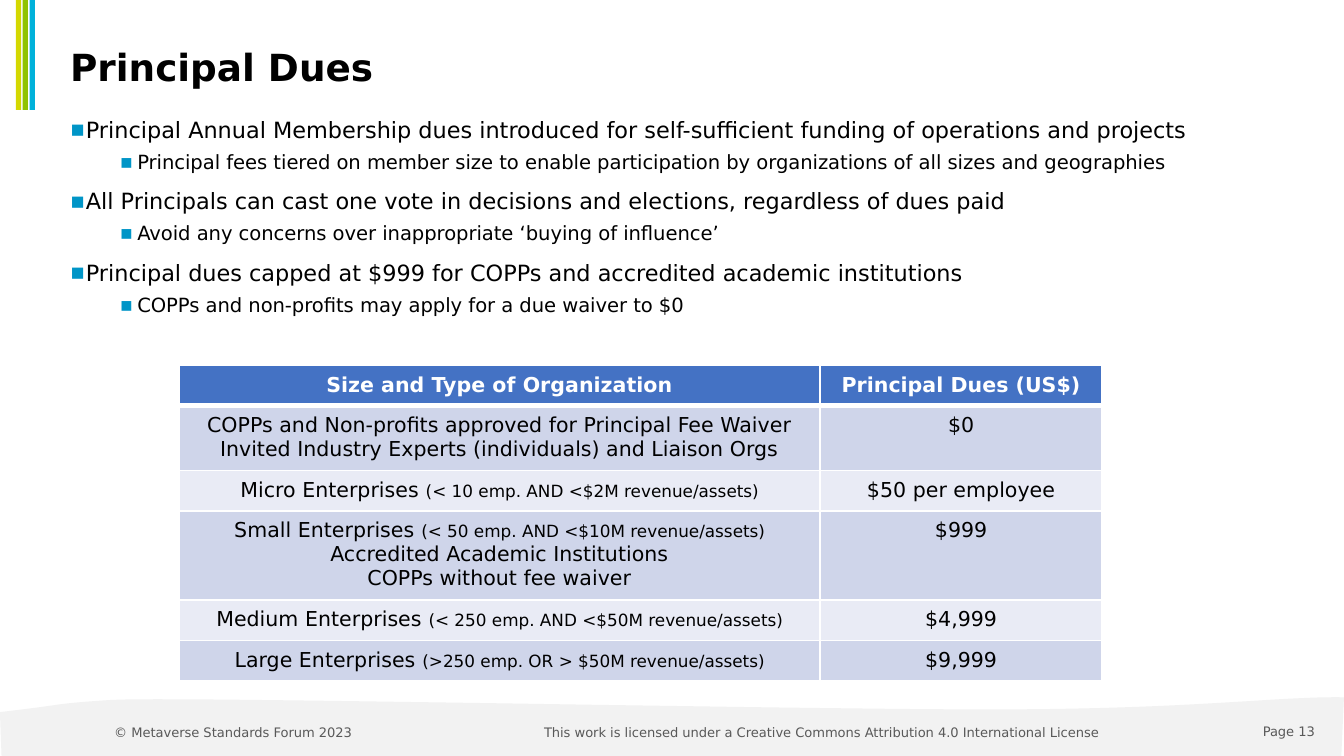
from lxml import etree
from pptx import Presentation
from pptx.dml.color import RGBColor
from pptx.enum.shapes import MSO_SHAPE as Shape
from pptx.enum.text import MSO_ANCHOR as Anchor, MSO_AUTO_SIZE as AutoSize, PP_ALIGN as Align
from pptx.oxml.ns import qn
from pptx.util import Cm, Pt

FONT = "DejaVu Sans"
BLACK = RGBColor(0x00, 0x00, 0x00)
WHITE = RGBColor(0xFF, 0xFF, 0xFF)
FOOTER_GRAY = RGBColor(0x59, 0x59, 0x59)
WAVE_GRAY = RGBColor(0xF2, 0xF2, 0xF2)
BULLET_BLUE = RGBColor(0x00, 0x95, 0xC7)
HEADER_BLUE = RGBColor(0x44, 0x72, 0xC4)
BANDS = [RGBColor(0xE9, 0xEB, 0xF5), RGBColor(0xCF, 0xD5, 0xEA)]
STRIPES = [RGBColor(0xD4, 0xD8, 0x00), RGBColor(0x91, 0xC3, 0x01), RGBColor(0x00, 0xB1, 0xDA)]

# Top edge of the footer wave: start point, then Bezier control triples (cm)
WAVE_START = (0, 13.46)
WAVE_CURVES = [
    [(1.32, 13.31), (0.91, 13.31), (2.11, 13.23)],
    [(3.3, 13.16), (14.81, 13.41), (18.69, 13.41)],
    [(22.56, 13.41), (24.13, 13.16), (25.4, 13.18)],
]

# Level and text of each bullet
POINTS = [
    (0, "Principal Annual Membership dues introduced for self-sufficient funding of operations and projects"),
    (1, "Principal fees tiered on member size to enable participation by organizations of all sizes and geographies"),
    (0, "All Principals can cast one vote in decisions and elections, regardless of dues paid"),
    (1, "Avoid any concerns over inappropriate ‘buying of influence’"),
    (0, "Principal dues capped at $999 for COPPs and accredited academic institutions"),
    (1, "COPPs and non-profits may apply for a due waiver to $0"),
]
# Per level: left margin, hanging indent, space before, size
LEVELS = [(Cm(0.3), Cm(-0.3), Pt(7.5), Pt(12)), (Cm(1.27), Cm(-0.33), Pt(3.8), Pt(10.5))]

# Row height (cm), lines of the organization cell as (name, small note), dues
DUES = [
    (0.76, [("Size and Type of Organization", "")], "Principal Dues (US$)"),
    (1.22, [("COPPs and Non-profits approved for Principal Fee Waiver", ""),
            ("Invited Industry Experts (individuals) and Liaison Orgs", "")], "$0"),
    (0.76, [("Micro Enterprises ", "(< 10 emp. AND <$2M revenue/assets)")], "$50 per employee"),
    (1.68, [("Small Enterprises ", "(< 50 emp. AND <$10M revenue/assets)"),
            ("Accredited Academic Institutions", ""),
            ("COPPs without fee waiver", "")], "$999"),
    (0.76, [("Medium Enterprises ", "(< 250 emp. AND <$50M revenue/assets)")], "$4,999"),
    (0.76, [("Large Enterprises ", "(>250 emp. OR > $50M revenue/assets)")], "$9,999"),
]


def format_run(run, size, color, bold=False):
    run.font.name = FONT
    run.font.size = size
    run.font.bold = bold
    run.font.color.rgb = color


def place(shape, left, top, width, height):
    shape.left, shape.top, shape.width, shape.height = Cm(left), Cm(top), Cm(width), Cm(height)


def paint(shape, color):
    shape.shadow.inherit = False
    shape.fill.solid()
    shape.fill.fore_color.rgb = color
    shape.line.fill.background()


def curve_points(start, controls, steps=24):
    corners = [start, *controls]
    for step in range(1, steps + 1):
        t = step / steps
        weights = [(1 - t) ** 3, 3 * t * (1 - t) ** 2, 3 * t ** 2 * (1 - t), t ** 3]
        yield tuple(sum(w * c[axis] for w, c in zip(weights, corners)) for axis in (0, 1))


def add_wave(slide):
    edge = [WAVE_START]
    for controls in WAVE_CURVES:
        edge.extend(curve_points(edge[-1], controls))
    outline = [(Cm(x), Cm(y)) for x, y in edge + [(25.35, 14.29), (0.03, 14.29)]]
    builder = slide.shapes.build_freeform(*outline[0])
    builder.add_line_segments(outline[1:], close=True)
    paint(builder.convert_to_shape(), WAVE_GRAY)


def add_stripes(slide):
    for i, color in enumerate(STRIPES):
        stripe = slide.shapes.add_shape(Shape.RECTANGLE, Cm(0.3 + 0.13 * i), 0, Cm(0.1), Cm(2.08))
        paint(stripe, color)


def add_footer(slide, text, left, top, width, height, align):
    box = slide.shapes.add_textbox(Cm(left), Cm(top), Cm(width), Cm(height))
    frame = box.text_frame
    frame.word_wrap = True
    frame.vertical_anchor = Anchor.MIDDLE
    frame.margin_top = frame.margin_bottom = Cm(0.1)
    frame.margin_left = frame.margin_right = Cm(0.2)
    frame.text = text
    line = frame.paragraphs[0]
    line.alignment = align
    line.line_spacing = 0.99
    format_run(line.runs[0], Pt(7), FOOTER_GRAY)


def fill_title(title):
    place(title, 1.07, 0.81, 23.24, 1.02)
    frame = title.text_frame
    frame.auto_size = AutoSize.NONE
    frame.vertical_anchor = Anchor.MIDDLE
    frame.text = "Principal Dues"
    heading = frame.paragraphs[0]
    heading.alignment = Align.LEFT
    heading.line_spacing = 0.9
    format_run(heading.runs[0], Pt(20), BLACK, bold=True)


def set_bullet(paragraph, margin, indent):
    props = paragraph._p.get_or_add_pPr()
    props.set("marL", str(margin))
    props.set("indent", str(indent))
    color = etree.SubElement(props, qn("a:buClr"))
    etree.SubElement(color, qn("a:srgbClr"), val=str(BULLET_BLUE))
    etree.SubElement(props, qn("a:buFont"), typeface=FONT)
    etree.SubElement(props, qn("a:buChar"), char="▪")


def fill_body(body):
    place(body, 1.07, 2.06, 23.24, 10.82)
    frame = body.text_frame
    frame.auto_size = AutoSize.NONE
    for i, (level, text) in enumerate(POINTS):
        point = frame.add_paragraph() if i else frame.paragraphs[0]
        margin, indent, before, size = LEVELS[level]
        point.text = text
        point.level = level
        set_bullet(point, margin, indent)
        point.space_before = before if i else Pt(0)
        format_run(point.runs[0], size, BLACK)


def set_borders(cell, top, bottom):
    props = cell._tc.get_or_add_tcPr()
    for side, width in (("L", 1), ("R", 1), ("T", top), ("B", bottom)):
        border = etree.SubElement(props, qn("a:ln" + side), w=str(Pt(width)))
        fill = etree.SubElement(border, qn("a:solidFill"))
        etree.SubElement(fill, qn("a:srgbClr"), val=str(WHITE))


def fill_cell(cell, lines, row):
    is_header = row == 0
    set_borders(cell, top=3 if row == 1 else 1, bottom=3 if is_header else 1)
    cell.fill.solid()
    cell.fill.fore_color.rgb = HEADER_BLUE if is_header else BANDS[row % 2]
    cell.margin_left = cell.margin_right = Cm(0.28)
    cell.margin_top = cell.margin_bottom = Cm(0.15)
    color = WHITE if is_header else BLACK
    frame = cell.text_frame
    for i, (name, note) in enumerate(lines):
        line = frame.add_paragraph() if i else frame.paragraphs[0]
        line.text = name
        line.alignment = Align.CENTER
        line.line_spacing = 0.99
        format_run(line.runs[0], Pt(11), color, is_header)
        if note:
            note_run = line.add_run()
            note_run.text = note
            format_run(note_run, Pt(9), color)


def add_dues_table(slide):
    frame = slide.shapes.add_table(len(DUES), 2, Cm(3.38), Cm(6.91), Cm(17.45), Cm(5.94))
    table = frame.table
    table.columns[0].width, table.columns[1].width = Cm(12.12), Cm(5.33)
    for row, (height, organization, dues) in enumerate(DUES):
        table.rows[row].height = Cm(height)
        fill_cell(table.cell(row, 0), organization, row)
        fill_cell(table.cell(row, 1), [(dues, "")], row)


def main():
    deck = Presentation()
    deck.slide_width, deck.slide_height = Cm(25.4), Cm(14.29)
    slide = deck.slides.add_slide(deck.slide_layouts[1])

    # Background and footer
    add_wave(slide)
    add_footer(slide, "© Metaverse Standards Forum 2023", 1.96, 13.61, 6.71, 0.48, Align.LEFT)
    add_footer(slide, "This work is licensed under a Creative Commons Attribution 4.0 International License",
               8.91, 13.61, 13.23, 0.48, Align.CENTER)
    add_footer(slide, "Page 13", 22.89, 13.59, 2.16, 0.5, Align.RIGHT)
    add_stripes(slide)

    # Content
    fill_title(slide.shapes.title)
    fill_body(slide.placeholders[1])
    add_dues_table(slide)
    deck.save("out.pptx")


if __name__ == "__main__":
    main()
